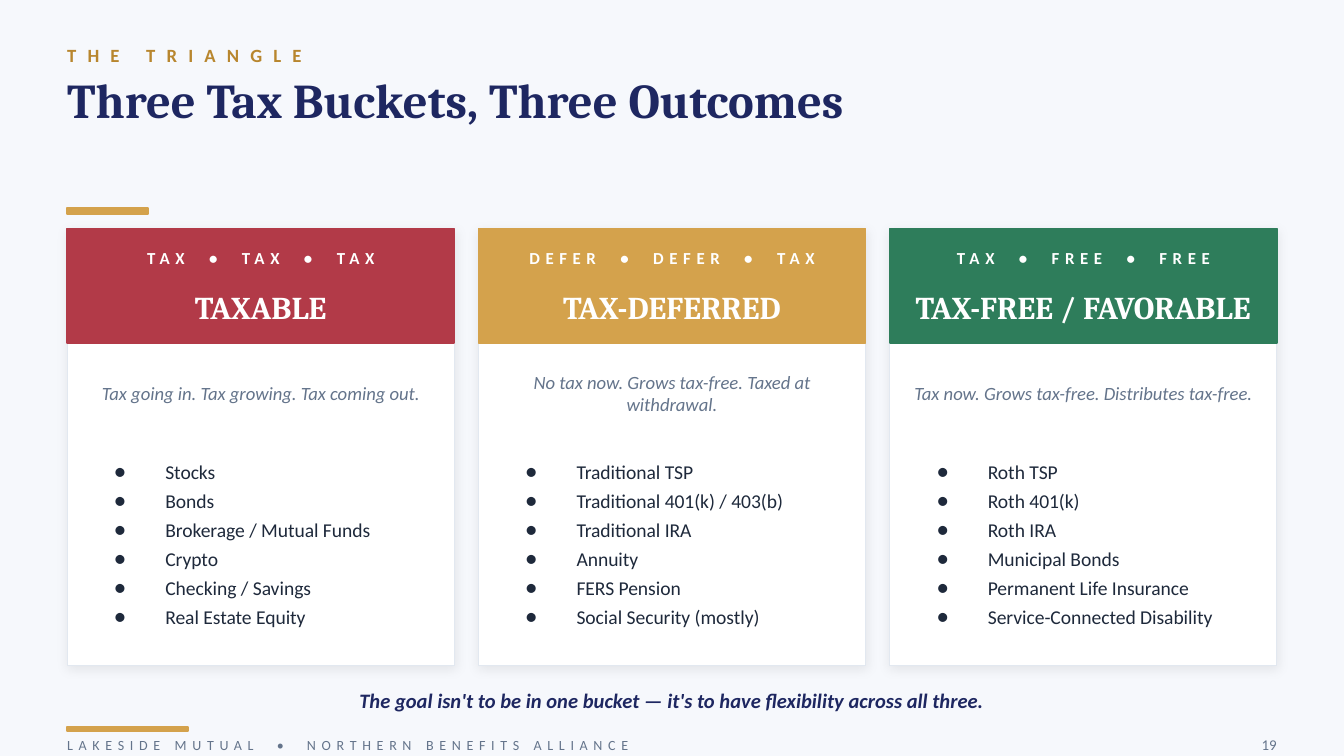
from dataclasses import dataclass
from typing import Any

from lxml import etree
from pptx import Presentation
from pptx import util as u
from pptx.dml import color
from pptx.enum import shapes, text
from pptx.oxml import ns

Box = tuple[float, float, float, float]
Align = text.PP_ALIGN
Anchor = text.MSO_ANCHOR


@dataclass(frozen=True)
class Theme:
    page: str = "F6F8FC"
    navy: str = "1E2761"
    gold: str = "D4A24C"
    bronze: str = "B8862E"
    red: str = "B23A48"
    green: str = "2E7D5B"
    white: str = "FFFFFF"
    edge: str = "E2E8F0"
    slate: str = "64748B"
    ink: str = "1E293B"
    shade: str = "000000"
    head: str = "Cambria"
    body: str = "Calibri"
    title: float = 26
    name: float = 17
    goal: float = 11
    item: float = 10.5
    note: float = 10
    tag: float = 9
    page_no: float = 8
    foot: float = 7.5


@dataclass(frozen=True)
class Bucket:
    name: str
    tag: str
    note: str
    fill: str
    items: tuple[str, ...]


T = Theme()
LEFT, TOP, WIDE, GAP, HIGH = 0.5, 1.7, 2.88, 0.18, 3.25

BUCKETS = (
    Bucket("TAXABLE", "TAX  •  TAX  •  TAX",
           "Tax going in. Tax growing. Tax coming out.", T.red,
           ("Stocks", "Bonds", "Brokerage / Mutual Funds", "Crypto",
            "Checking / Savings", "Real Estate Equity")),
    Bucket("TAX-DEFERRED", "DEFER  •  DEFER  •  TAX",
           "No tax now. Grows tax-free. Taxed at withdrawal.", T.gold,
           ("Traditional TSP", "Traditional 401(k) / 403(b)", "Traditional IRA",
            "Annuity", "FERS Pension", "Social Security (mostly)")),
    Bucket("TAX-FREE / FAVORABLE", "TAX  •  FREE  •  FREE",
           "Tax now. Grows tax-free. Distributes tax-free.", T.green,
           ("Roth TSP", "Roth 401(k)", "Roth IRA", "Municipal Bonds",
            "Permanent Life Insurance", "Service-Connected Disability")),
)


def rgb(code: str) -> color.RGBColor:
    return color.RGBColor.from_string(code)


def node(root: Any, tag: str, **attrs: Any) -> Any:
    return etree.SubElement(root, ns.qn(tag), {k: str(v) for k, v in attrs.items()})


def write(slide: Any, box: Box, *lines: str, size: float, ink: str,
          font: str = T.body, bold: bool = False, slant: bool = False,
          track: float = 0, align: Any = Align.LEFT, anchor: Any = Anchor.MIDDLE,
          bullet: str = "", after: float = 0, holder: Any = None) -> None:
    left, top, wide, high = map(u.Inches, box)
    if holder is None:
        shape = slide.shapes.add_textbox(left, top, wide, high)
    else:
        shape = holder
        shape.left, shape.top, shape.width, shape.height = left, top, wide, high
        slide.shapes._spTree.append(shape._element)
    frame = shape.text_frame
    frame.word_wrap = True
    frame.auto_size = text.MSO_AUTO_SIZE.NONE
    frame.vertical_anchor = anchor
    frame.margin_left = frame.margin_right = 0
    frame.margin_top = frame.margin_bottom = 0
    for i, line in enumerate(lines):
        para = frame.add_paragraph() if i else frame.paragraphs[0]
        para.alignment = align
        para.space_before = u.Pt(0)
        para.space_after = u.Pt(after)
        if bullet:
            props = para._p.get_or_add_pPr()
            props.set("marL", str(u.Inches(0.38)))
            props.set("indent", str(u.Inches(-0.38)))
            node(props, "a:buFont", typeface=font)
            node(props, "a:buChar", char=bullet)
        run = para.add_run()
        run.text = line
        run.font.name, run.font.size = font, u.Pt(size)
        run.font.bold, run.font.italic = bold, slant
        run.font.color.rgb = rgb(ink)
        if track:
            run._r.get_or_add_rPr().set("spc", str(int(track * 100)))


def block(slide: Any, box: Box, fill: str, edge: str = "",
          line: float = 1, shadow: bool = False) -> None:
    shape = slide.shapes.add_shape(shapes.MSO_SHAPE.RECTANGLE, *map(u.Inches, box))
    shape.fill.solid()
    shape.fill.fore_color.rgb = rgb(fill)
    shape.line.color.rgb = rgb(edge or fill)
    shape.line.width = u.Pt(line)
    shape.shadow.inherit = False
    if shadow:
        effects = shape._element.spPr.find(ns.qn("a:effectLst"))
        outer = node(effects, "a:outerShdw", blurRad=u.Pt(6), dist=u.Pt(1.5),
                     dir=90 * 60000, algn="bl", rotWithShape=0)
        node(node(outer, "a:srgbClr", val=T.shade), "a:alpha", val=8000)


def card(slide: Any, x: float, item: Bucket, holder: Any) -> None:
    mid = Align.CENTER
    block(slide, (x, TOP, WIDE, HIGH), T.white, T.edge, 0.75, shadow=True)
    block(slide, (x, TOP, WIDE, 0.85), item.fill)
    write(slide, (x, TOP + 0.08, WIDE, 0.28), item.tag, size=T.tag, ink=T.white,
          bold=True, track=3, align=mid)
    write(slide, (x, TOP + 0.36, WIDE, 0.45), item.name, size=T.name, ink=T.white,
          font=T.head, bold=True, align=mid)
    write(slide, (x + 0.18, TOP + 0.95, WIDE - 0.36, 0.55), item.note, size=T.note,
          ink=T.slate, slant=True, align=mid)
    write(slide, (x + 0.35, TOP + 1.55, WIDE - 0.5, 1.6), *item.items, size=T.item,
          ink=T.ink, bullet="●", after=3, holder=holder)


def main() -> None:
    deck = Presentation()
    deck.slide_width = u.Inches(10)
    deck.slide_height = deck.slide_width * 9 // 16
    slide = deck.slides.add_slide(deck.slide_layouts.get_by_name("Comparison"))
    slide.background.fill.solid()
    slide.background.fill.fore_color.rgb = rgb(T.page)
    title, *lists, spare = list(slide.placeholders)
    spare._element.getparent().remove(spare._element)

    write(slide, (LEFT, 0.28, 9, 0.26), "THE TRIANGLE", size=T.note, ink=T.bronze,
          bold=True, track=6)
    write(slide, (LEFT, 0.52, 9.2, 1), "Three Tax Buckets, Three Outcomes",
          size=T.title, ink=T.navy, font=T.head, bold=True, anchor=Anchor.TOP,
          holder=title)
    block(slide, (LEFT, 1.55, 0.6, 0.04), T.gold)
    for i, (item, holder) in enumerate(zip(BUCKETS, lists)):
        card(slide, LEFT + i * (WIDE + GAP), item, holder)

    write(slide, (LEFT, 5.07, 9, 0.28),
          "The goal isn't to be in one bucket — it's to have flexibility across all three.",
          size=T.goal, ink=T.navy, bold=True, slant=True, align=Align.CENTER)
    block(slide, (LEFT, 5.41, 0.9, 0.03), T.gold)
    write(slide, (LEFT, 5.45, 6, 0.18), "LAKESIDE MUTUAL  •  NORTHERN BENEFITS ALLIANCE",
          size=T.foot, ink=T.slate, track=3)
    write(slide, (9, 5.45, 0.5, 0.18), "19", size=T.page_no, ink=T.slate,
          align=Align.RIGHT)
    deck.save("out.pptx")


if __name__ == "__main__":
    main()
